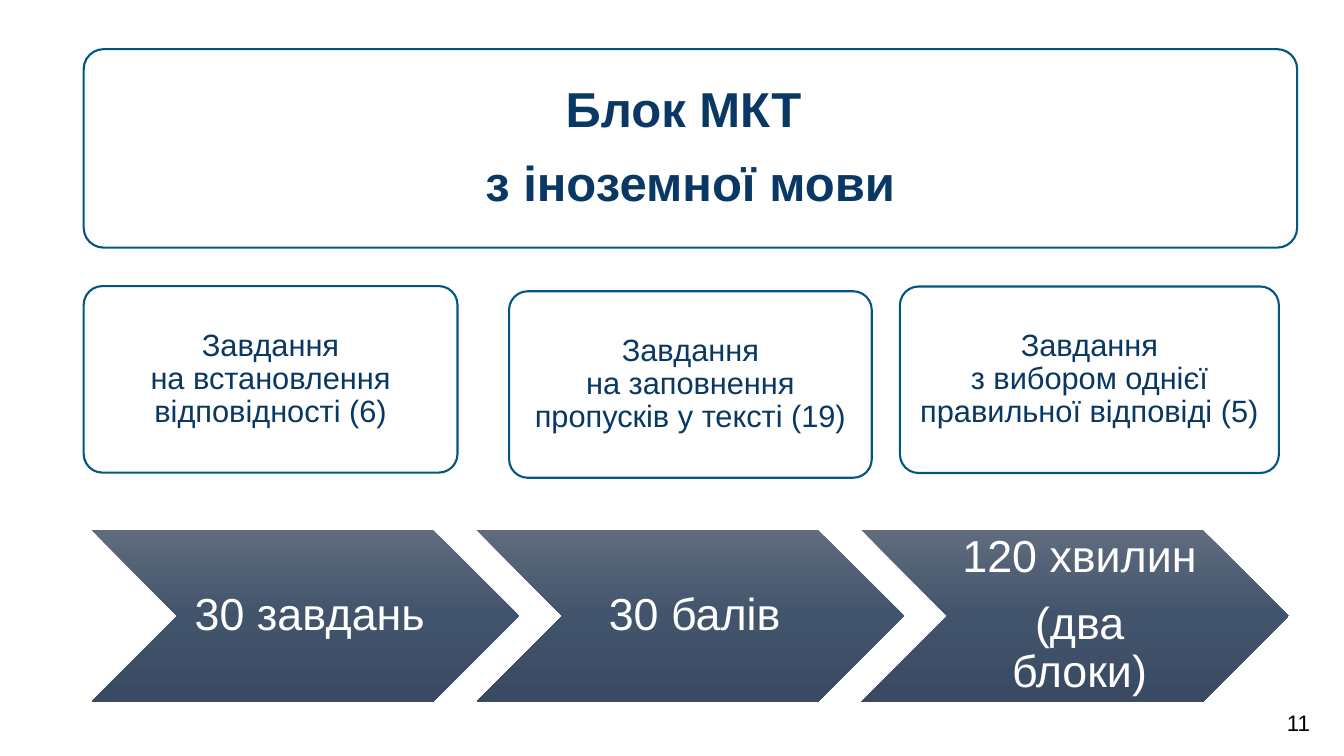
"""Build the slide on the foreign language test block."""
from copy import deepcopy

from pptx import Presentation
from pptx.dml.color import RGBColor
from pptx.enum.shapes import MSO_SHAPE
from pptx.enum.text import MSO_ANCHOR, PP_ALIGN
from pptx.util import Cm, Pt

ROUNDED, CHEVRON = MSO_SHAPE.ROUNDED_RECTANGLE, MSO_SHAPE.CHEVRON
MIDDLE, TOP, CENTER = MSO_ANCHOR.MIDDLE, MSO_ANCHOR.TOP, PP_ALIGN.CENTER

NAVY = RGBColor(0x09, 0x38, 0x64)
OUTLINE = RGBColor(0x03, 0x56, 0x81)
WHITE = RGBColor(0xFF, 0xFF, 0xFF)
BLACK = RGBColor(0x00, 0x00, 0x00)
GRADIENT = [
    (0, RGBColor(0x60, 0x6B, 0x7D)),
    (0.5, RGBColor(0x42, 0x54, 0x6C)),
    (1, RGBColor(0x39, 0x4A, 0x62)),
]

TITLE = ["Блок МКТ ", "з іноземної мови"]
TASKS = [
    (2.11, 7.21, 9.42, ["Завдання", "на встановлення відповідності (6)"]),
    (12.83, 7.34, 9.14, ["Завдання", "на заповнення пропусків у тексті (19)"]),
    (22.68, 7.22, 9.55, ["Завдання", "з вибором однієї правильної відповіді (5)"]),
]
TOTALS = [["30 завдань"], ["30 балів"], ["120 хвилин", "(два блоки)"]]
PAGE = ["11"]

TASK_HEIGHT = 4.7
TOTAL_LEFT, TOTAL_TOP, TOTAL_WIDTH, TOTAL_HEIGHT, TOTAL_PITCH = 2.31, 13.36, 10.77, 4.32, 9.7

TITLE_FONT = {"size": Pt(35), "bold": True}
TASK_FONT = {"size": Pt(22)}
TOTAL_FONT = {"size": Pt(32)}
PAGE_FONT = {"size": Pt(16)}
TITLE_SPACING = {"line_spacing": 0.9, "space_after": Pt(15)}
TASK_SPACING = {"line_spacing": 0.9}
TOTAL_SPACING = {"line_spacing": 0.9, "space_after": Pt(13)}


def set_all(target, values):
    for key, value in values.items():
        setattr(target, key, value)


def write(shape, lines, font, color, spacing, insets, anchor=MIDDLE):
    frame = shape.text_frame
    left, others = insets
    set_all(frame, {
        "word_wrap": True, "vertical_anchor": anchor, "margin_left": Cm(left),
        "margin_top": Cm(others), "margin_right": Cm(others), "margin_bottom": Cm(others),
    })
    for index, line in enumerate(lines):
        paragraph = frame.add_paragraph() if index else frame.paragraphs[0]
        set_all(paragraph, {"alignment": CENTER, **spacing})
        run = paragraph.add_run()
        run.text = line
        set_all(run.font, {"name": "Arial", **font})
        run.font.color.rgb = color


def add_card(slide, box, lines, font, spacing, inset):
    card = slide.shapes.add_shape(ROUNDED, *map(Cm, box))
    card.adjustments[0] = 0.1
    card.shadow.inherit = False
    card.fill.solid()
    card.fill.fore_color.rgb = WHITE
    card.line.color.rgb = OUTLINE
    card.line.width = Pt(1.5)
    write(card, lines, font, NAVY, spacing, (inset, inset))


def add_total(slide, box, lines):
    arrow = slide.shapes.add_shape(CHEVRON, *map(Cm, box))
    arrow.shadow.inherit = False
    arrow.line.fill.background()
    arrow.fill.gradient()
    arrow.fill.gradient_angle = 270
    first_stop = arrow.element.spPr.xpath(".//a:gs")[0]
    first_stop.addnext(deepcopy(first_stop))
    for stop, (position, color) in zip(arrow.fill.gradient_stops, GRADIENT):
        stop.position = position
        stop.color.rgb = color
    write(arrow, lines, TOTAL_FONT, WHITE, TOTAL_SPACING, (0.36, 0.13))


def main():
    deck = Presentation()
    deck.slide_width, deck.slide_height = Cm(33.87), Cm(19.05)
    slide = deck.slides.add_slide(deck.slide_layouts[6])

    page = slide.shapes.add_textbox(Cm(31.85), Cm(17.75), Cm(1.63), Cm(0.94))
    write(page, PAGE, PAGE_FONT, BLACK, {}, (0.25, 0.13), TOP)

    add_card(slide, (2.11, 1.24, 30.58, 5), TITLE, TITLE_FONT, TITLE_SPACING, 0.38)
    for left, top, width, lines in TASKS:
        add_card(slide, (left, top, width, TASK_HEIGHT), lines, TASK_FONT, TASK_SPACING, 0.23)
    for index, lines in enumerate(TOTALS):
        left = TOTAL_LEFT + index * TOTAL_PITCH
        add_total(slide, (left, TOTAL_TOP, TOTAL_WIDTH, TOTAL_HEIGHT), lines)

    deck.save("out.pptx")


if __name__ == "__main__":
    main()
